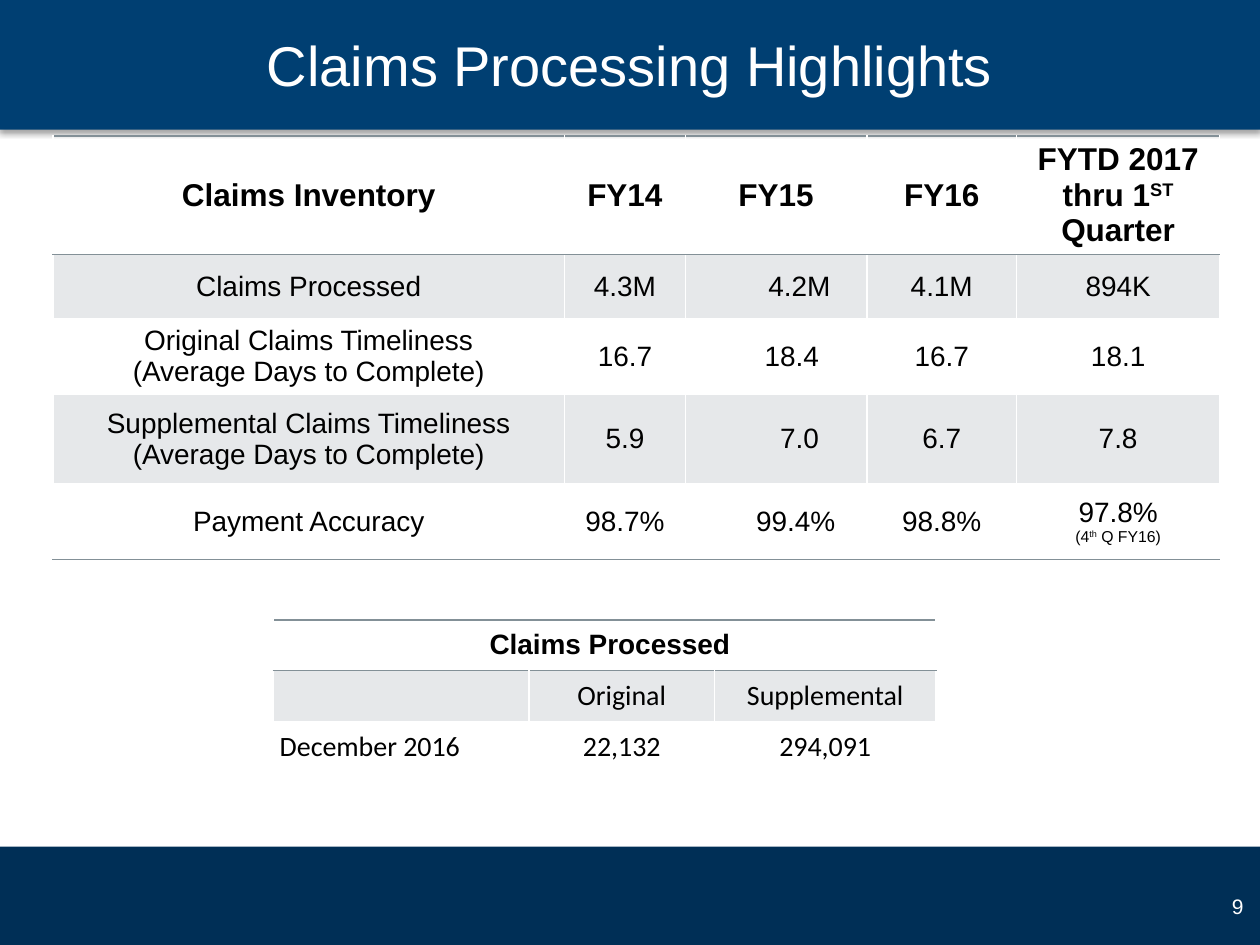
from dataclasses import dataclass

from lxml.etree import SubElement
from pptx import Presentation
from pptx.dml.color import RGBColor
from pptx.enum.shapes import MSO_SHAPE
from pptx.enum.text import MSO_ANCHOR, MSO_AUTO_SIZE, PP_ALIGN
from pptx.oxml import parse_xml
from pptx.oxml.ns import nsdecls, qn
from pptx.util import Inches, Pt


@dataclass(frozen=True)
class Theme:
    header: str = "003F72"
    footer: str = "002F56"
    rule: str = "839097"
    ink: str = "000000"
    paper: str = "FFFFFF"
    font: str = "Arial"
    table_font: str = "Calibri"
    title: int = 32
    heading: int = 18
    body: int = 16
    number: int = 12
    note: int = 9
    inset: float = 0.05


THEME = Theme()
GRID_COLUMNS, GRID_ROWS = 100, 75


def write(frame, text, size=THEME.body, color=THEME.ink, font=THEME.font,
          bold=False, align=PP_ALIGN.CENTER):
    for line in text.split("\n"):
        para = frame.paragraphs[0]
        if para.runs:
            para = frame.add_paragraph()
        para.alignment = align
        for position, part in enumerate(line.split("^")):
            span = para.add_run()
            span.text = part
            span.font.size = Pt(size)
            span.font.name = font
            span.font.bold = bold
            span.font.color.rgb = RGBColor.from_string(color)
            if position % 2:
                span._r.get_or_add_rPr().set("baseline", "30000")


class HighlightSlide:
    def __init__(self, deck, theme):
        self.deck, self.theme = deck, theme
        self.page = deck.slides.add_slide(deck.slide_layouts[5])

    def area(self, left, top, width, height):
        column = self.deck.slide_width / GRID_COLUMNS
        row = self.deck.slide_height / GRID_ROWS
        return [int(length) for length in
                (left * column, top * row, width * column, height * row)]

    def set_insets(self, target):
        inset = Inches(self.theme.inset)
        target.margin_left = target.margin_right = inset
        target.margin_top = target.margin_bottom = inset
        target.vertical_anchor = MSO_ANCHOR.MIDDLE

    def bar(self, top, height, color, shadow=False):
        box = self.page.shapes.add_shape(
            MSO_SHAPE.RECTANGLE, *self.area(0, top, GRID_COLUMNS, height))
        box.shadow.inherit = False
        box.fill.solid()
        box.fill.fore_color.rgb = RGBColor.from_string(color)
        box.line.fill.background()
        if shadow:
            effects = box._element.spPr.find(qn("a:effectLst"))
            effects.append(parse_xml(
                f'<a:outerShdw {nsdecls("a")} blurRad="{Pt(3)}" '
                f'dist="{Pt(1.8)}" dir="5400000" rotWithShape="0">'
                f'<a:srgbClr val="{self.theme.ink}"><a:alpha val="35000"/>'
                '</a:srgbClr></a:outerShdw>'))

    def title(self, text, *place):
        box = self.page.shapes.title
        self.page.shapes._spTree.append(box._element)
        box.left, box.top, box.width, box.height = self.area(*place)
        self.set_insets(box.text_frame)
        write(box.text_frame, text, self.theme.title, self.theme.paper)

    def number(self, text, *place):
        box = self.page.shapes.add_textbox(*self.area(*place))
        frame = box.text_frame
        frame.word_wrap = False
        frame.auto_size = MSO_AUTO_SIZE.SHAPE_TO_FIT_TEXT
        self.set_insets(frame)
        write(frame, text, self.theme.number, self.theme.paper,
              align=PP_ALIGN.RIGHT)

    def table(self, left, top, widths, heights, shaded, rules):
        place = self.area(left, top, sum(widths), sum(heights))
        grid = self.page.shapes.add_table(
            len(heights), len(widths), *place).table
        grid.first_row = grid.horz_banding = False
        for column, width in zip(grid.columns, widths):
            column.width = self.area(0, 0, width, 0)[2]
        for index, (row, height) in enumerate(zip(grid.rows, heights)):
            row.height = self.area(0, 0, 0, height)[3]
            for cell in row.cells:
                self.set_insets(cell)
                self.shade(cell, index in shaded)
                self.rule(cell, rules.get(index, ""))
        return grid

    def shade(self, cell, shaded):
        if not shaded:
            cell.fill.background()
            return
        cell.fill.solid()
        cell.fill.fore_color.rgb = RGBColor.from_string(self.theme.rule)
        color = cell._tc.tcPr.find(".//" + qn("a:srgbClr"))
        SubElement(color, qn("a:alpha"), val="20000")

    def rule(self, cell, sides):
        for side in reversed(sides):
            cell._tc.tcPr.insert(0, parse_xml(
                f'<a:ln{side} {nsdecls("a")} w="{Pt(1)}"><a:solidFill>'
                f'<a:srgbClr val="{self.theme.rule}"/></a:solidFill>'
                f'</a:ln{side}>'))


def add_inventory(slide):
    rows = [
        ["Claims Inventory", "FY14", "FY15", "FY16",
         "FYTD 2017 thru 1^ST^ Quarter"],
        ["Claims Processed", "4.3M", "4.2M", "4.1M", "894K"],
        ["Original Claims Timeliness\n(Average Days to Complete)",
         "16.7", "18.4", "16.7", "18.1"],
        ["Supplemental Claims Timeliness\n(Average Days to Complete)",
         "5.9", "7.0", "6.7", "7.8"],
        ["Payment Accuracy", "98.7%", "99.4%", "98.8%", "97.8%"],
    ]
    grid = slide.table(4.2, 10.8, [40.6, 9.6, 14.4, 11.9, 16.1],
                       [9, 5.1, 6, 7.1, 6], shaded={1, 3},
                       rules={0: "TB", 1: "T", 4: "B"})
    for index, values in enumerate(rows):
        heading = index == 0
        size = THEME.heading if heading else THEME.body
        for cell, value in zip(grid.rows[index].cells, values):
            write(cell.text_frame, value, size, bold=heading)
    for index, indent in enumerate([0.37, 0.25, 0.37, 0.31], start=1):
        grid.cell(index, 2).margin_left = Inches(THEME.inset + indent)
    write(grid.cell(4, 4).text_frame, "(4^th^ Q FY16)", THEME.note)


def add_monthly_claims(slide):
    grid = slide.table(21.7, 49.2, [20.3, 14.7, 17.6], [4] * 3,
                       shaded={1}, rules={0: "TB", 1: "T"})
    heading = grid.cell(0, 0)
    heading.merge(grid.cell(0, 2))
    heading.margin_left = Inches(THEME.inset + 0.08)
    write(heading.text_frame, "Claims Processed", bold=True)
    rows = [["", "Original", "Supplemental"],
            ["December 2016", "22,132", "294,091"]]
    for index, values in enumerate(rows, start=1):
        for column, value in enumerate(values):
            if value:
                align = PP_ALIGN.CENTER if column else PP_ALIGN.LEFT
                write(grid.cell(index, column).text_frame, value,
                      font=THEME.table_font, align=align)


def main():
    deck = Presentation()
    deck.slide_width, deck.slide_height = Inches(10), Inches(7.5)
    slide = HighlightSlide(deck, THEME)
    slide.bar(67.2, 7.8, THEME.footer)
    slide.bar(0, 10.3, THEME.header, shadow=True)
    slide.title("Claims Processing Highlights", 5, 0, 90, 10.2)
    add_inventory(slide)
    add_monthly_claims(slide)
    slide.number("9", 97.2, 70.5, 2, 2.9)
    deck.save("out.pptx")


if __name__ == "__main__":
    main()
